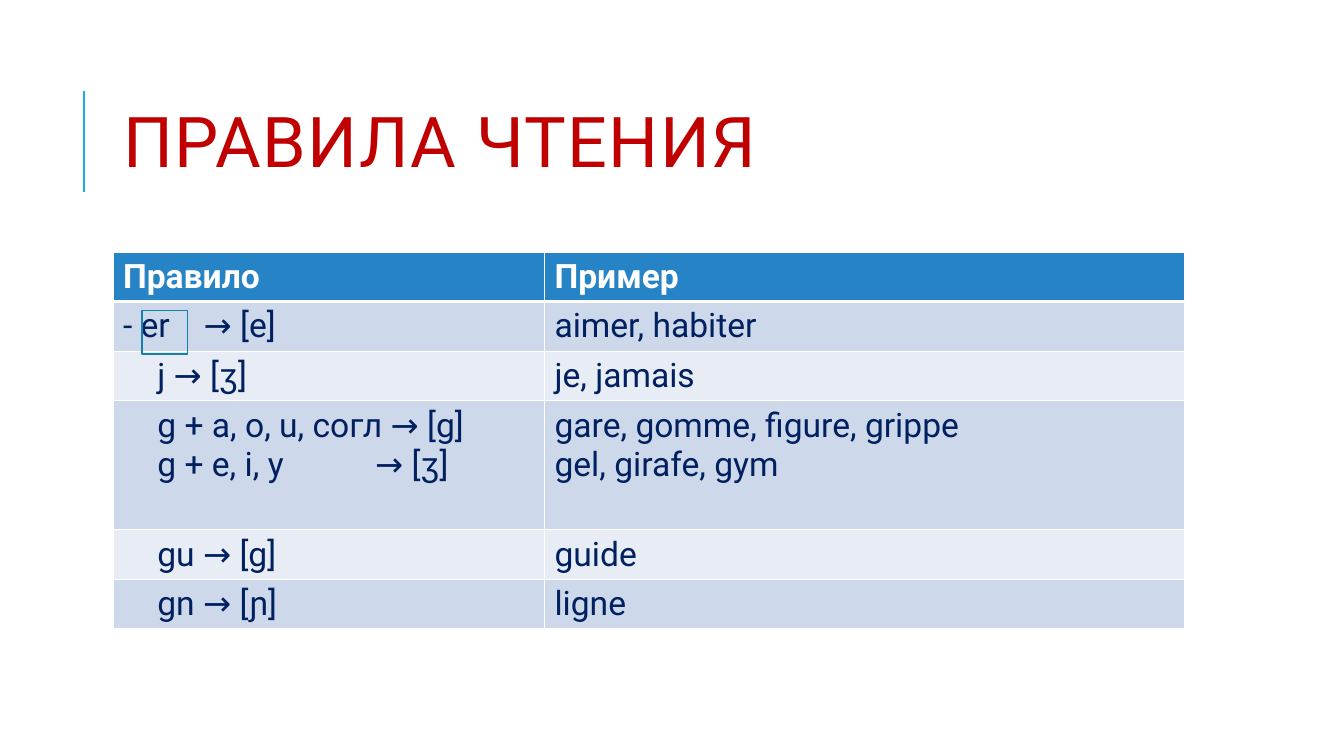
from lxml.etree import SubElement
from pptx import Presentation
from pptx.dml.color import RGBColor
from pptx.enum.shapes import MSO_CONNECTOR, MSO_SHAPE
from pptx.enum.text import MSO_ANCHOR, PP_ALIGN
from pptx.oxml.ns import qn
from pptx.util import Inches, Pt

FONT = "Roboto"
RED = RGBColor(0xC0, 0x00, 0x00)
NAVY = RGBColor(0x00, 0x20, 0x60)
WHITE = RGBColor(0xFF, 0xFF, 0xFF)
HEADER_BLUE = RGBColor(0x26, 0x83, 0xC6)
BAND_DARK = RGBColor(0xCD, 0xD9, 0xEA)
BAND_LIGHT = RGBColor(0xE8, 0xED, 0xF5)
ACCENT = RGBColor(0x1C, 0xAD, 0xE4)
FRAME_BLUE = RGBColor(0x15, 0x80, 0xA9)


def add_run(paragraph, text, size, color, bold=False):
    run = paragraph.add_run()
    run.text = text
    run.font.name = FONT
    run.font.size = Pt(size)
    run.font.bold = bold
    run.font.color.rgb = color
    return run


def set_borders(cell, bottom_width):
    properties = cell._tc.get_or_add_tcPr()
    widths = {"a:lnL": 1, "a:lnR": 1, "a:lnT": 1, "a:lnB": bottom_width}
    for index, (tag, width) in enumerate(widths.items()):
        line = SubElement(properties, qn(tag), w=str(Pt(width)))
        SubElement(SubElement(line, qn("a:solidFill")), qn("a:srgbClr"), val=str(WHITE))
        properties.insert(index, line)  # borders come before the fill


presentation = Presentation()
presentation.slide_width = Inches(13.33)
presentation.slide_height = Inches(7.5)
slide = presentation.slides.add_slide(presentation.slide_layouts[5])

# Accent line beside the title
accent_line = slide.shapes.add_connector(
    MSO_CONNECTOR.STRAIGHT, Inches(0.83), Inches(1.9), Inches(0.83), Inches(0.9))
accent_line.line.color.rgb = ACCENT
accent_line.line.width = Pt(1.5)
SubElement(accent_line._element.spPr, qn("a:effectLst"))

# Title
title = slide.shapes.title
title.left, title.top = Inches(1.12), Inches(0.64)
title.width, title.height = Inches(10.63), Inches(1.64)
title.text_frame.vertical_anchor = MSO_ANCHOR.MIDDLE
title.text_frame.word_wrap = True
paragraph = title.text_frame.paragraphs[0]
paragraph.alignment = PP_ALIGN.LEFT
paragraph.line_spacing = 0.8
title_run = add_run(paragraph, "ПРАВИЛА ЧТЕНИЯ", 50, RED)
title_run.font._element.set("spc", "100")

# Table of reading rules: row height, rule lines, example lines
RULES = [
    (0.48, ["Правило"], ["Пример"]),
    (0.49, ["- er\t→ [e]"], ["aimer, habiter"]),
    (0.49, ["\tj → [ʒ]"], ["je, jamais"]),
    (1.28, ["\tg + a, o, u, согл → [g]", "\tg + e, i, y\t→ [ʒ]"],
     ["gare, gomme, figure, grippe", "gel, girafe, gym"]),
    (0.49, ["\tgu → [g]"], ["guide"]),
    (0.49, ["\tgn → [ɲ]"], ["ligne"]),
]
table = slide.shapes.add_table(
    len(RULES), 2, Inches(1.12), Inches(2.5), Inches(10.63), Inches(3.72)).table
table.columns[0].width = Inches(4.28)
table.columns[1].width = Inches(6.35)

for row_index, (height, *columns) in enumerate(RULES):
    is_header = row_index == 0
    table.rows[row_index].height = Inches(height)
    for column_index, lines in enumerate(columns):
        cell = table.cell(row_index, column_index)
        cell.fill.solid()
        if is_header:
            cell.fill.fore_color.rgb = HEADER_BLUE
        else:
            cell.fill.fore_color.rgb = BAND_DARK if row_index % 2 else BAND_LIGHT
        set_borders(cell, 3 if is_header else 1)
        for line_index, text in enumerate(lines):
            frame = cell.text_frame
            paragraph = frame.add_paragraph() if line_index else frame.paragraphs[0]
            add_run(paragraph, text, 24, WHITE if is_header else NAVY, is_header)
            # Tab stops for the indented rules and their arrows
            if "\t" in text:
                stops = [0.34, 2.5] if text.startswith("\t") else [0.8]
                tab_list = SubElement(paragraph._p.get_or_add_pPr(), qn("a:tabLst"))
                for stop in stops:
                    SubElement(tab_list, qn("a:tab"), pos=str(Inches(stop)), algn="l")

# Frame around the ending "er"
frame_box = slide.shapes.add_shape(
    MSO_SHAPE.RECTANGLE, Inches(1.41), Inches(3.08), Inches(0.45), Inches(0.43))
frame_box.shadow.inherit = False
frame_box.fill.background()
frame_box.line.color.rgb = FRAME_BLUE
frame_box.line.width = Pt(1.25)

presentation.save("out.pptx")
